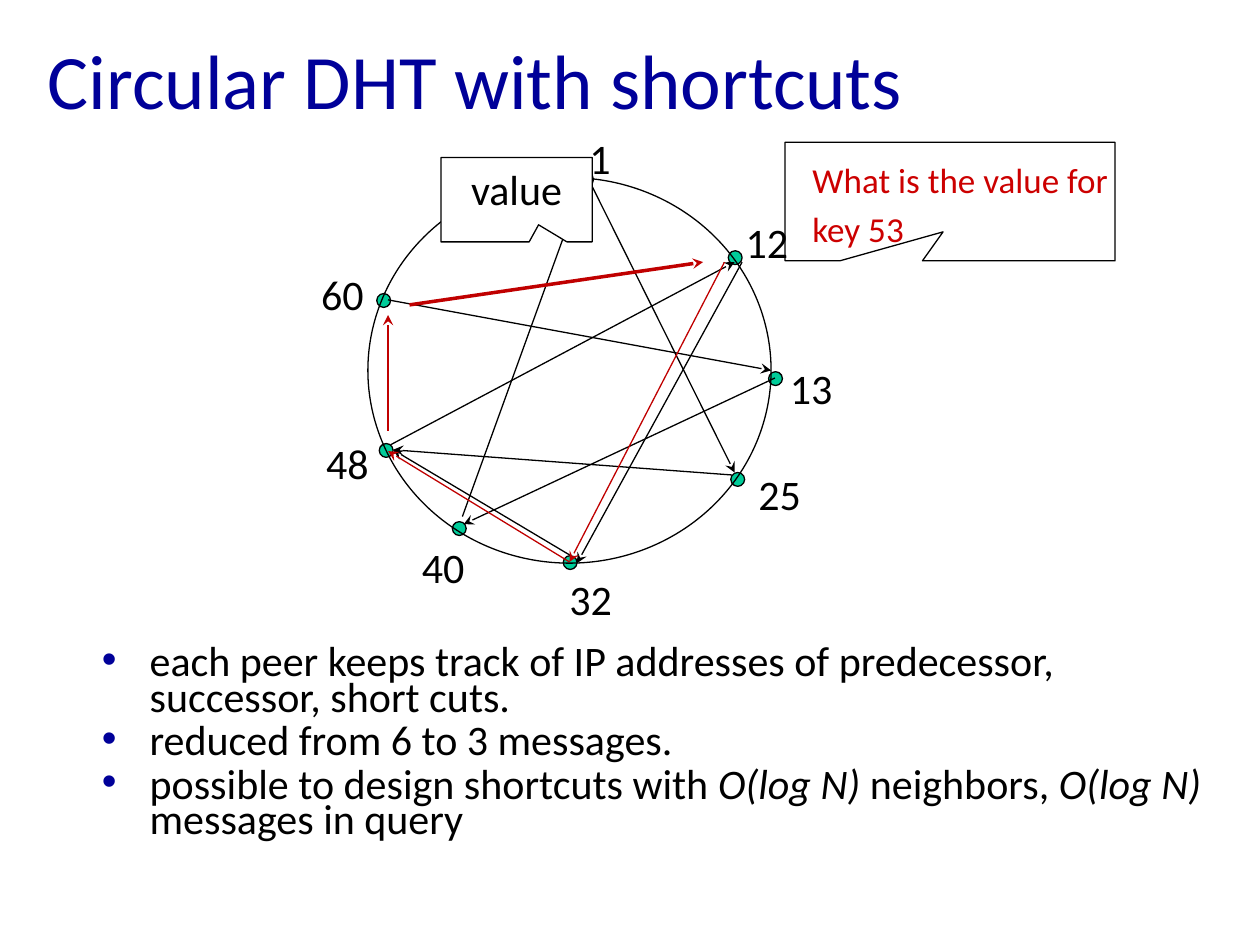
from lxml import etree
from pptx import Presentation
from pptx import util as u
from pptx.dml.color import RGBColor
from pptx.enum import shapes, text
from pptx.oxml.ns import qn

FONT = "Calibri"
BLACK, NAVY, GREEN, RED, DARK_RED, WHITE = (
    "000000", "000099", "00CC99", "CC0000", "C00000", "FFFFFF")

TITLE = "Circular DHT with shortcuts"
BULLETS = [  # (text, italic) runs
    [("each peer keeps track of IP addresses of predecessor, successor, short cuts.", False)],
    [("reduced from 6 to 3 messages.", False)],
    [("possible to design shortcuts with ", False), ("O(log N) ", True),
     ("neighbors, ", False), ("O(log N) ", True), ("messages in query", False)],
]
QUESTION = ["What is the value for", "key 53"]

RING = (2.92, 1.41, 3.2, 3.06)
DOT = 0.11
PEERS = {  # id: (dot left, top), (label left, top)
    "1": ((4.6, 1.37), (4.58, 1)),
    "12": ((5.78, 1.99), (5.82, 1.67)),
    "13": ((6.1, 2.95), (6.17, 2.83)),
    "25": ((5.8, 3.75), (5.92, 3.67)),
    "32": ((4.47, 4.41), (4.42, 4.5)),
    "40": ((3.59, 4.14), (3.25, 4.25)),
    "48": ((3.01, 3.52), (2.49, 3.42)),
    "60": ((2.99, 2.33), (2.45, 2.08)),
}
SHORTCUTS = [  # from, to
    ((6.15, 3), (3.68, 4.16)),
    ((5.81, 3.77), (3.12, 3.57)),
    ((4.53, 4.41), (3.12, 3.57)),
    ((3.67, 4.1), (4.64, 1.42)),
    ((3.1, 3.53), (5.83, 2.08)),
    ((3.08, 2.38), (6.12, 2.94)),
    ((4.69, 1.46), (5.83, 3.75)),
    ((5.89, 2.08), (4.58, 4.47)),
]
QUERY_START = [((5.75, 2.08), (4.52, 4.46)), ((4.52, 4.46), (3.08, 3.58))]
QUERY_END = ((3.08, 3.42), (3.08, 2.5))
REPLY = ((3.25, 2.42), (5.58, 2.08))


def rgb(color):
    return RGBColor.from_string(color)


def inches(values):
    return [u.Inches(v) for v in values]


def add_run(p, words, size, color=BLACK, italic=None):
    r = p.add_run()
    r.text = words
    r.font.name, r.font.size, r.font.italic = FONT, u.Pt(size), italic
    r.font.color.rgb = rgb(color)


def add_outlined(parent, kind, box, fill=None):
    sp = parent.add_shape(kind, *inches(box))
    sp.shadow.inherit = False
    if fill:
        sp.fill.solid()
        sp.fill.fore_color.rgb = rgb(fill)
    else:
        sp.fill.background()
    sp.line.color.rgb = rgb(BLACK)
    sp.line.width = u.Pt(0.75)
    return sp


def add_callout(parent, box, tip, fill=None):
    """Square-cornered callout; tip is its offset from the centre in shares of the size."""
    sp = add_outlined(parent, shapes.MSO_SHAPE.ROUNDED_RECTANGULAR_CALLOUT, box, fill)
    for i, value in enumerate((*tip, 0)):
        sp.adjustments[i] = value
    return sp


def add_text(parent, box, wrap=False):
    tf = parent.add_textbox(*inches(box)).text_frame
    tf.word_wrap = wrap
    return tf


def add_arrow(parent, ends, color=BLACK, width=0.75):
    start, end = ends
    line = parent.add_connector(shapes.MSO_CONNECTOR.STRAIGHT, *inches(start + end))
    line.line.color.rgb = rgb(color)
    line.line.width = u.Pt(width)
    etree.SubElement(line.line._get_or_add_ln(), qn("a:tailEnd"), type="stealth")
    etree.SubElement(line._element.spPr, qn("a:effectLst"))


def add_bullet(p):
    pPr = p._p.get_or_add_pPr()
    pPr.set("marL", str(u.Inches(0.38)))
    pPr.set("indent", str(-u.Inches(0.38)))
    color = etree.SubElement(pPr, qn("a:buClr"))
    etree.SubElement(color, qn("a:srgbClr"), val=NAVY)
    etree.SubElement(pPr, qn("a:buFont"), typeface="Arial")
    etree.SubElement(pPr, qn("a:buChar"), char="•")


prs = Presentation()
prs.slide_width, prs.slide_height = inches((10, 7.5))
s = prs.slides.add_slide(prs.slide_layouts[5])

title = s.shapes.title
title.left, title.top, title.width, title.height = inches((0.28, 0, 9, 1.25))
title.text_frame.vertical_anchor = text.MSO_ANCHOR.MIDDLE
p = title.text_frame.paragraphs[0]
p.alignment = text.PP_ALIGN.LEFT
add_run(p, TITLE, 44, NAVY)

tf = add_text(s.shapes, (0.71, 5.1, 9, 1.83), wrap=True)
for i, runs in enumerate(BULLETS):
    p = tf.add_paragraph() if i else tf.paragraphs[0]
    p.line_spacing = 0.7
    p.space_before = u.Pt(4.8 if i else 0)
    add_bullet(p)
    for words, italic in runs:
        add_run(p, words, 24, italic=italic)

ring = s.shapes.add_group_shape().shapes
for dot, _ in PEERS.values():
    add_outlined(ring, shapes.MSO_SHAPE.OVAL, (*dot, DOT, DOT), GREEN)
add_outlined(ring, shapes.MSO_SHAPE.OVAL, RING)
for peer, (_, label) in PEERS.items():
    tf = add_text(ring, (*label, 0.24 + 0.15 * len(peer), 0.5))
    add_run(tf.paragraphs[0], peer, 24)
for ends in SHORTCUTS:
    add_arrow(ring, ends)

for ends in QUERY_START:
    add_arrow(s.shapes, ends, DARK_RED)

question = s.shapes.add_group_shape().shapes
add_callout(question, (6.23, 1.13, 2.62, 0.94), (-0.021, 0.256))
tf = add_text(question, (6.35, 1.21, 2.6, 0.66))
for i, words in enumerate(QUESTION):
    p = tf.add_paragraph() if i else tf.paragraphs[0]
    p.space_before = u.Pt(4 if i else 0)
    add_run(p, words, 20, RED)

answer = add_callout(s.shapes, (3.5, 1.25, 1.2, 0.67), (0.146, 0.298), WHITE)
answer.text_frame.vertical_anchor = text.MSO_ANCHOR.TOP
p = answer.text_frame.paragraphs[0]
p.alignment = text.PP_ALIGN.CENTER
add_run(p, "value", 24)

add_arrow(s.shapes, REPLY, DARK_RED, 2)
add_arrow(s.shapes, QUERY_END, DARK_RED)

prs.save("out.pptx")
